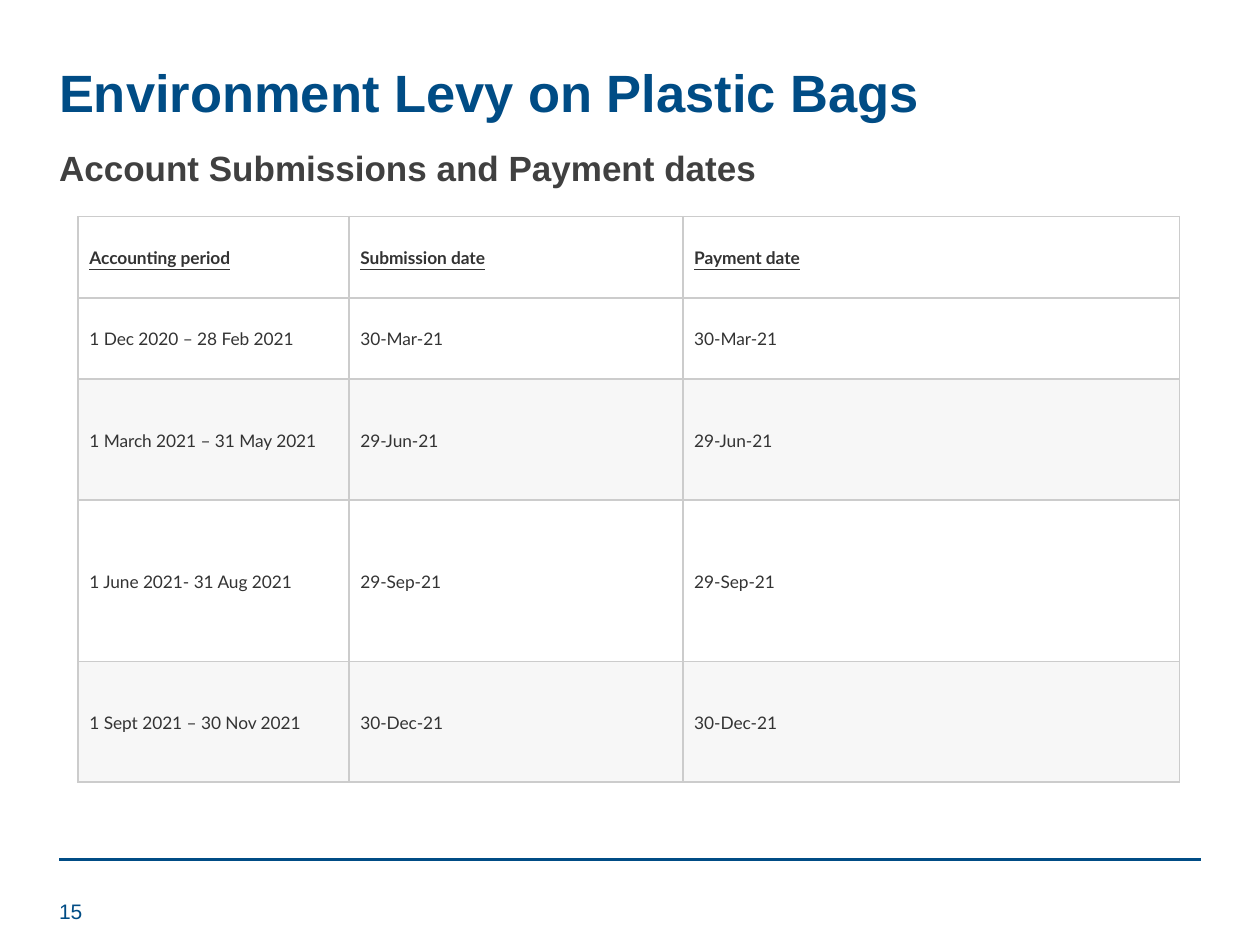
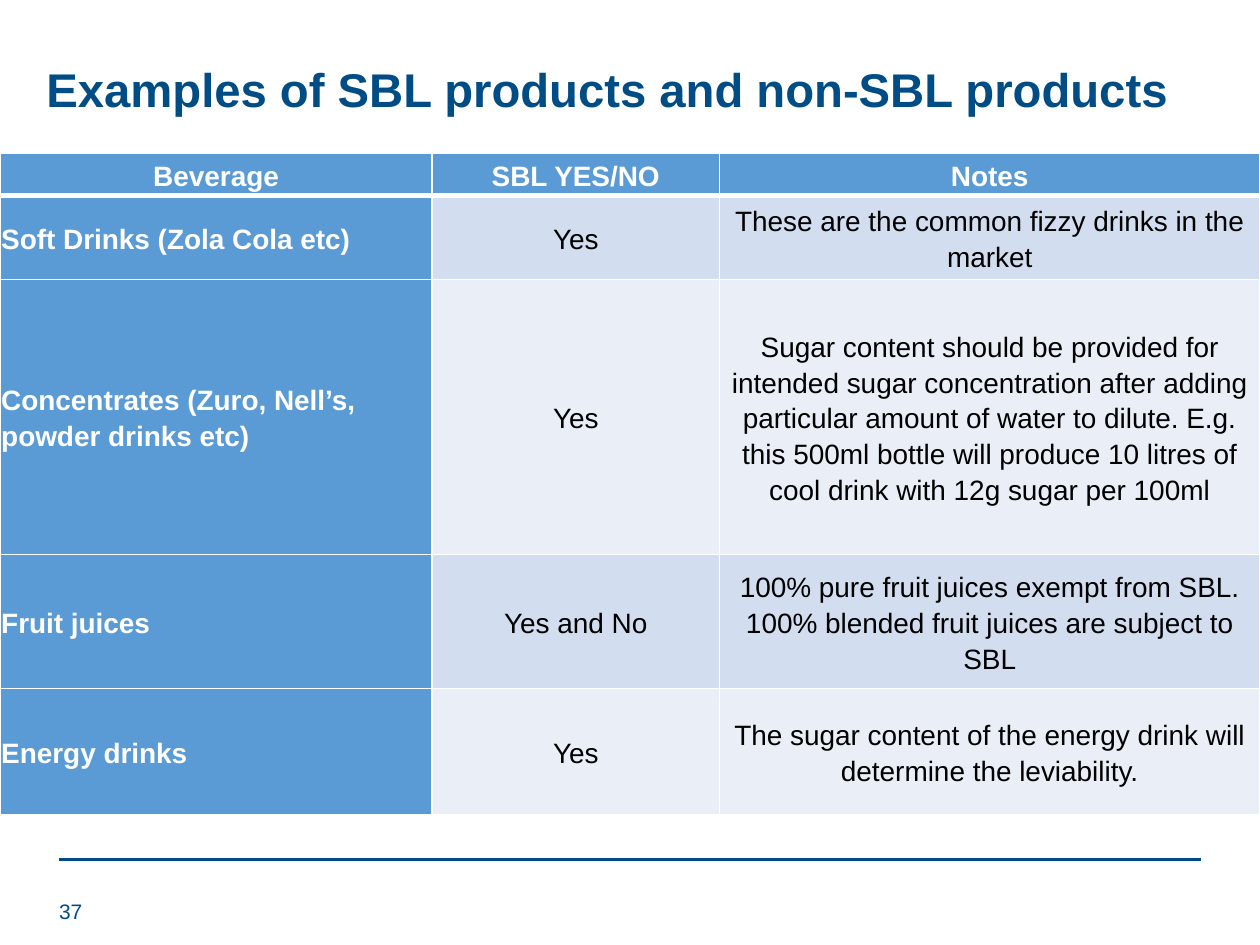
"""Build two levy slides: payment dates and examples of leviable drinks."""
from dataclasses import dataclass

from lxml import etree
from pptx import Presentation
from pptx import util as u
from pptx.dml.color import RGBColor
from pptx.enum import shapes, text
from pptx.oxml import ns

WIDTH, HEIGHT = u.Inches(10), u.Inches(7.5)
NAVY, CHARCOAL, INK, BLACK, WHITE = "004C85", "404040", "333333", "000000", "FFFFFF"
SILVER, MIST = "CCCCCC", "F7F7F7"
BLUE, PALE_BLUE, PALEST_BLUE = "5B9BD5", "D2DEEF", "EAEFF7"
LEFT, CENTER = text.PP_ALIGN.LEFT, text.PP_ALIGN.CENTER
TOP, MIDDLE = text.MSO_ANCHOR.TOP, text.MSO_ANCHOR.MIDDLE


@dataclass(frozen=True)
class Area:
    """Position and size in percent of the slide."""
    left: float
    top: float
    width: float
    height: float


@dataclass(frozen=True)
class CellLook:
    """Fill, text format and bottom rule of one cell."""
    fill: str
    words: dict
    bottom: float = 1


@dataclass(frozen=True)
class Grid:
    """A table with column and row sizes in percent of the slide."""
    left: float
    top: float
    columns: tuple
    rows: tuple
    content: tuple
    margins: tuple
    border: str


def across(share: float) -> int:
    """Turn a percentage of the slide width into a length."""
    return round(WIDTH * share / 100)


def down(share: float) -> int:
    """Turn a percentage of the slide height into a length."""
    return round(HEIGHT * share / 100)


def color(value: str) -> RGBColor:
    """Turn a hex string into a colour."""
    return RGBColor.from_string(value)


def write(frame, words: str, *, size: float, ink: str, font: str = "Arial", bold: bool = False,
          underline: bool = False, align=LEFT, spacing: float = 1.0) -> None:
    """Put one formatted paragraph in a text frame."""
    frame.word_wrap = True
    paragraph = frame.paragraphs[0]
    paragraph.alignment, paragraph.line_spacing = align, spacing
    run = paragraph.add_run()
    run.text = words
    run.font.name, run.font.size = font, u.Pt(size)
    run.font.bold, run.font.underline = bold, underline
    run.font.color.rgb = color(ink)


def add_words(slide, words: str, area: Area, anchor=TOP, **look) -> None:
    """Add a text box."""
    frame = slide.shapes.add_textbox(across(area.left), down(area.top),
                                     across(area.width), down(area.height)).text_frame
    frame.vertical_anchor = anchor
    write(frame, words, **look)


def add_page(deck, title: str, number: int, area: Area, size: float):
    """Add a slide with its title, footer rule and number."""
    slide = deck.slides.add_slide(deck.slide_layouts[6])
    rule = slide.shapes.add_connector(shapes.MSO_CONNECTOR.STRAIGHT, across(4.7), down(90.93),
                                      across(95.3), down(90.93))
    rule.line.color.rgb, rule.line.width = color(NAVY), u.Pt(2)
    etree.SubElement(rule._element.spPr, ns.qn("a:effectLst"))
    add_words(slide, title, area, size=size, ink=NAVY, bold=True, spacing=0.9)
    add_words(slide, str(number), Area(3.7, 93.73, 22.5, 5.33), MIDDLE, size=12, ink=NAVY)
    return slide


def set_borders(cell, ink: str, bottom: float) -> None:
    """Draw the four borders of a cell."""
    properties = cell._tc.get_or_add_tcPr()
    for side, points in zip("LRTB", (1, 1, 1, bottom)):
        edge = etree.SubElement(properties, ns.qn(f"a:ln{side}"), w=str(u.Pt(points)))
        fill = etree.SubElement(edge, ns.qn("a:solidFill"))
        etree.SubElement(fill, ns.qn("a:srgbClr"), val=ink)


def add_grid(slide, grid: Grid, look_at) -> None:
    """Add a table whose cell looks follow from row and column."""
    table = slide.shapes.add_table(len(grid.rows), len(grid.columns), across(grid.left),
                                   down(grid.top), across(sum(grid.columns)),
                                   down(sum(grid.rows))).table
    table.horz_banding = table.first_row = False
    for column, share in zip(table.columns, grid.columns):
        column.width = across(share)
    for row, share in zip(table.rows, grid.rows):
        row.height = down(share)
    for r, entries in enumerate(grid.content):
        for c, entry in enumerate(entries):
            cell, look = table.cell(r, c), look_at(r, c)
            (cell.margin_left, cell.margin_top,
             cell.margin_right, cell.margin_bottom) = map(u.Inches, grid.margins)
            cell.vertical_anchor = MIDDLE
            set_borders(cell, grid.border, look.bottom)
            cell.fill.solid()
            cell.fill.fore_color.rgb = color(look.fill)
            write(cell.text_frame, entry, **look.words)


def date_look(row: int, column: int) -> CellLook:
    """Underline the headings and shade every second row after them."""
    heading = row == 0
    shaded = row > 0 and row % 2 == 0
    return CellLook(MIST if shaded else WHITE,
                    dict(size=9.9, ink=INK, font="Lato", bold=heading, underline=heading))


def drink_look(row: int, column: int) -> CellLook:
    """Emphasise the heading row and drink column and band the rest."""
    strong = row == 0 or column == 0
    band = PALE_BLUE if row % 2 else PALEST_BLUE
    return CellLook(BLUE if strong else band,
                    dict(size=16, ink=WHITE if strong else BLACK, bold=strong, spacing=1.15,
                         align=LEFT if row and column == 0 else CENTER),
                    bottom=1 if row else 3)


PAYMENT_DATES = Grid(
    6.2, 22.93, (21.5, 26.5, 39.4), (8.6, 8.6, 12.8, 17.05, 12.8),
    (("Accounting period", "Submission date", "Payment date"),
     ("1 Dec 2020 – 28 Feb 2021", "30-Mar-21", "30-Mar-21"),
     ("1 March 2021 – 31 May 2021", "29-Jun-21", "29-Jun-21"),
     ("1 June 2021- 31 Aug 2021", "29-Sep-21", "29-Sep-21"),
     ("1 Sept 2021 – 30 Nov 2021", "30-Dec-21", "30-Dec-21")),
    (0.09, 0.01, 0.01, 0), SILVER)

DRINKS = Grid(
    0, 16.27, (34.3, 22.8, 42.9), (4.4, 8.9, 29.1, 14.2, 13.4),
    (("Beverage", "SBL YES/NO", "Notes"),
     ("Soft Drinks (Zola Cola etc)", "Yes", "These are the common fizzy drinks in the market"),
     ("Concentrates (Zuro, Nell’s, powder drinks etc)", "Yes",
      "Sugar content should be provided for intended sugar concentration after adding "
      "particular amount of water to dilute. E.g. this 500ml bottle will produce 10 litres "
      "of cool drink with 12g sugar per 100ml"),
     ("Fruit juices", "Yes and No",
      "100% pure fruit juices exempt from SBL. 100% blended fruit juices are subject to SBL"),
     ("Energy drinks", "Yes",
      "The sugar content of the energy drink will determine the leviability.")),
    (0.01, 0, 0.01, 0), WHITE)


def main() -> None:
    """Build and save the presentation."""
    deck = Presentation()
    deck.slide_width, deck.slide_height = WIDTH, HEIGHT

    dates = add_page(deck, "Environment Levy on Plastic Bags", 15, Area(3.7, 6.4, 86.2, 7.73), 30)
    add_words(dates, "Account Submissions and Payment dates", Area(3.7, 15.33, 86.2, 6.4),
              size=20, ink=CHARCOAL, bold=True, spacing=0.9)
    add_grid(dates, PAYMENT_DATES, date_look)

    products = add_page(deck, "Examples of SBL products and non-SBL products", 37,
                        Area(2.7, 6.4, 95.6, 7.73), 27)
    add_grid(products, DRINKS, drink_look)
    deck.save("out.pptx")


if __name__ == "__main__":
    main()
